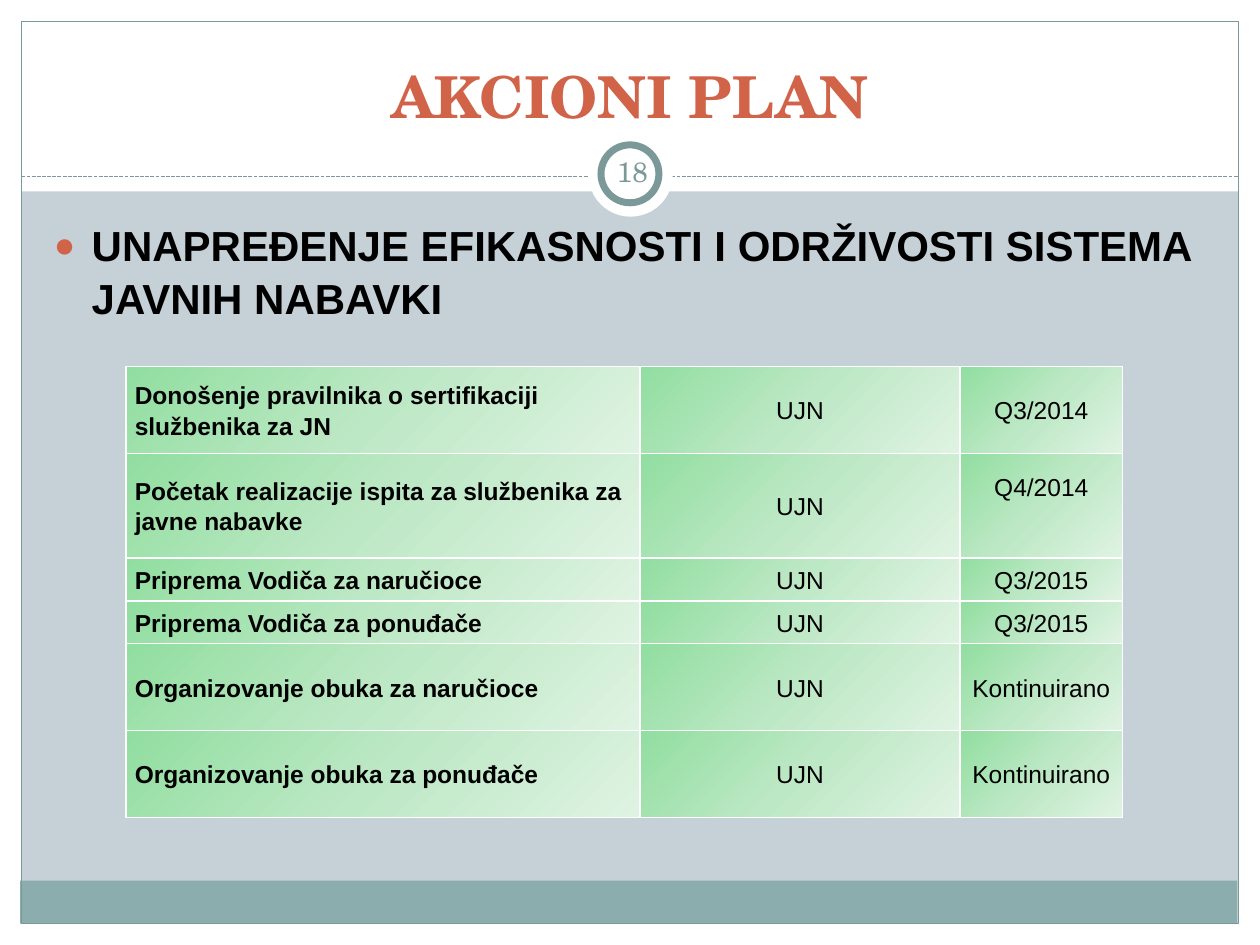
from dataclasses import dataclass
from typing import Optional

from lxml import etree
from pptx import Presentation
from pptx import util as u
from pptx.dml.color import RGBColor
from pptx.enum import dml, shapes, text
from pptx.oxml import ns, parse_xml

WHITE, TEAL, BAND, CORAL, BLACK = "FFFFFF", "7C999A", "8CADAE", "D16349", "000000"
GREENS = ((0, "91DEA0"), (50, "BDE8C5"), (100, "DFF3E3"))
SERIF, SANS = "TeX Gyre Schola", "Arial"
CENTER, LEFT = text.PP_ALIGN.CENTER, text.PP_ALIGN.LEFT
MIDDLE, BOTTOM = text.MSO_ANCHOR.MIDDLE, text.MSO_ANCHOR.BOTTOM
RECT, OVAL = shapes.MSO_SHAPE.RECTANGLE, shapes.MSO_SHAPE.OVAL


@dataclass
class Panel:
    kind: int
    box: tuple
    fill: Optional[str] = None
    line: Optional[str] = None
    weight: float = 0.75


@dataclass
class Activity:
    name: str
    owner: str
    deadline: str
    height: float
    deadline_lift: float = 0


PANELS = [
    Panel(RECT, (0, 7.33, 10, 0.17), WHITE),
    Panel(RECT, (0, 0, 10, 1.52), WHITE),
    Panel(RECT, (0, 0, 0.17, 7.5), WHITE),
    Panel(RECT, (9.83, 0, 0.17, 7.5), WHITE),
    Panel(RECT, (0.16, 6.99, 9.66, 0.34), BAND),
    Panel(RECT, (0.17, 0.17, 9.66, 7.16), line=TEAL),
]
BADGE = [
    Panel(OVAL, (4.67, 1.05, 0.67, 0.67), WHITE),
    Panel(OVAL, (4.77, 1.15, 0.46, 0.46), WHITE, TEAL, 4),
]
ACTIVITIES = [
    Activity("Donošenje pravilnika o sertifikaciji službenika za JN", "UJN", "Q3/2014", 0.69),
    Activity("Početak realizacije ispita za službenika za javne nabavke", "UJN", "Q4/2014", 0.83, 0.3),
    Activity("Priprema Vodiča za naručioce", "UJN", "Q3/2015", 0.34),
    Activity("Priprema Vodiča za ponuđače", "UJN", "Q3/2015", 0.34),
    Activity("Organizovanje obuka za naručioce", "UJN", "Kontinuirano", 0.69),
    Activity("Organizovanje obuka za ponuđače", "UJN", "Kontinuirano", 0.69),
]
COLUMNS = (4.08, 2.54, 1.29)


def rgb(value: str) -> RGBColor:
    return RGBColor.from_string(value)


def inches(box: tuple) -> list:
    return [u.Inches(v) for v in box]


def set_attrs(target, values: dict) -> None:
    for name, value in values.items():
        setattr(target, name, value)


def write(tf, words: str, font: str, size: float, color: str, bold: bool, **layout):
    p = tf.paragraphs[0]
    set_attrs(p, layout)
    r = p.add_run()
    r.text = words
    set_attrs(r.font, {"name": font, "size": u.Pt(size), "bold": bold})
    r.font.color.rgb = rgb(color)
    return p


def draw_panel(s, panel: Panel) -> None:
    sp = s.shapes.add_shape(panel.kind, *inches(panel.box))
    sp.shadow.inherit = False
    if panel.fill:
        sp.fill.solid()
        sp.fill.fore_color.rgb = rgb(panel.fill)
    else:
        sp.fill.background()
    if panel.line:
        sp.line.color.rgb = rgb(panel.line)
        sp.line.width = u.Pt(panel.weight)
    else:
        sp.line.fill.background()


def draw_divider(s) -> None:
    line = s.shapes.add_connector(shapes.MSO_CONNECTOR.STRAIGHT, *inches((0.17, 1.4, 9.83, 1.4)))
    line.line.color.rgb = rgb(TEAL)
    line.line.width = u.Pt(0.75)
    line.line.dash_style = dml.MSO_LINE.SQUARE_DOT
    etree.SubElement(line.element.spPr, ns.qn("a:effectLst"))


def draw_title(s) -> None:
    title = s.shapes.title
    box = inches((0.33, 0.25, 9.33, 0.83))
    set_attrs(title, dict(zip(("left", "top", "width", "height"), box)))
    set_attrs(title.text_frame, {"vertical_anchor": BOTTOM, "word_wrap": True,
                                 "auto_size": text.MSO_AUTO_SIZE.NONE})
    write(title.text_frame, "AKCIONI PLAN", SERIF, 33, CORAL, True, alignment=CENTER)
    title.element.getparent().append(title.element)


def draw_page_number(s) -> None:
    tf = s.shapes.add_textbox(*inches((4.77, 1.12, 0.5, 0.48))).text_frame
    margins = ("margin_left", "margin_top", "margin_right", "margin_bottom")
    set_attrs(tf, dict.fromkeys(margins, u.Inches(0.05)))
    set_attrs(tf, {"vertical_anchor": MIDDLE, "word_wrap": True})
    write(tf, "18", SERIF, 16, TEAL, False, alignment=CENTER)


def draw_heading(s) -> None:
    tf = s.shapes.add_textbox(*inches((0.33, 1.67, 9.3, 1.1))).text_frame
    tf.word_wrap = True
    p = write(tf, "UNAPREĐENJE EFIKASNOSTI I ODRŽIVOSTI SISTEMA JAVNIH NABAVKI",
              SANS, 24, BLACK, True, alignment=LEFT, line_spacing=1.06)
    pPr = p._p.get_or_add_pPr()
    pPr.set("marL", str(u.Inches(0.3)))
    pPr.set("indent", str(u.Inches(-0.3)))
    color = etree.SubElement(pPr, ns.qn("a:buClr"))
    etree.SubElement(color, ns.qn("a:srgbClr"), val=CORAL)
    etree.SubElement(pPr, ns.qn("a:buSzPct"), val="85000")
    etree.SubElement(pPr, ns.qn("a:buFont"), typeface=SANS)
    etree.SubElement(pPr, ns.qn("a:buChar"), char="●")


def style_cell(cell) -> None:
    tcPr = cell._tc.get_or_add_tcPr()
    for side in "LRTB":
        tcPr.append(parse_xml(
            f'<a:ln{side} {ns.nsdecls("a")} w="{u.Pt(1)}"><a:solidFill>'
            f'<a:srgbClr val="{WHITE}"/></a:solidFill></a:ln{side}>'))
    stops = "".join(f'<a:gs pos="{pos * 1000}"><a:srgbClr val="{color}"/></a:gs>'
                    for pos, color in GREENS)
    tcPr.append(parse_xml(
        f'<a:gradFill {ns.nsdecls("a")} rotWithShape="1"><a:gsLst>{stops}</a:gsLst>'
        f'<a:lin ang="{45 * 60000}" scaled="0"/></a:gradFill>'))


def draw_table(s) -> None:
    box = inches((1, 2.91, sum(COLUMNS), sum(a.height for a in ACTIVITIES)))
    table = s.shapes.add_table(len(ACTIVITIES), len(COLUMNS), *box).table
    set_attrs(table, {"first_row": False, "horz_banding": False})
    for column, width in zip(table.columns, COLUMNS):
        column.width = u.Inches(width)
    for row, activity in zip(table.rows, ACTIVITIES):
        row.height = u.Inches(activity.height)
        values = (activity.name, activity.owner, activity.deadline)
        lifts = (0, 0, activity.deadline_lift)
        for i, (cell, value, lift) in enumerate(zip(row.cells, values, lifts)):
            set_attrs(cell, {"margin_left": u.Inches(0.07), "margin_right": u.Inches(0.07),
                             "margin_top": 0, "margin_bottom": u.Inches(lift),
                             "vertical_anchor": MIDDLE})
            write(cell.text_frame, value, SANS, 14, BLACK, i == 0,
                  alignment=CENTER if i else LEFT, line_spacing=1.1,
                  space_before=u.Pt(2.9), space_after=u.Pt(2.9))
            style_cell(cell)


def main() -> None:
    prs = Presentation()
    set_attrs(prs, {"slide_width": u.Inches(10), "slide_height": u.Inches(7.5)})
    s = prs.slides.add_slide(prs.slide_layouts[5])
    s.background.fill.solid()
    s.background.fill.fore_color.rgb = rgb("C5D1D7")
    for panel in PANELS:
        draw_panel(s, panel)
    draw_divider(s)
    for panel in BADGE:
        draw_panel(s, panel)
    draw_title(s)
    draw_page_number(s)
    draw_heading(s)
    draw_table(s)
    prs.save("out.pptx")


if __name__ == "__main__":
    main()
